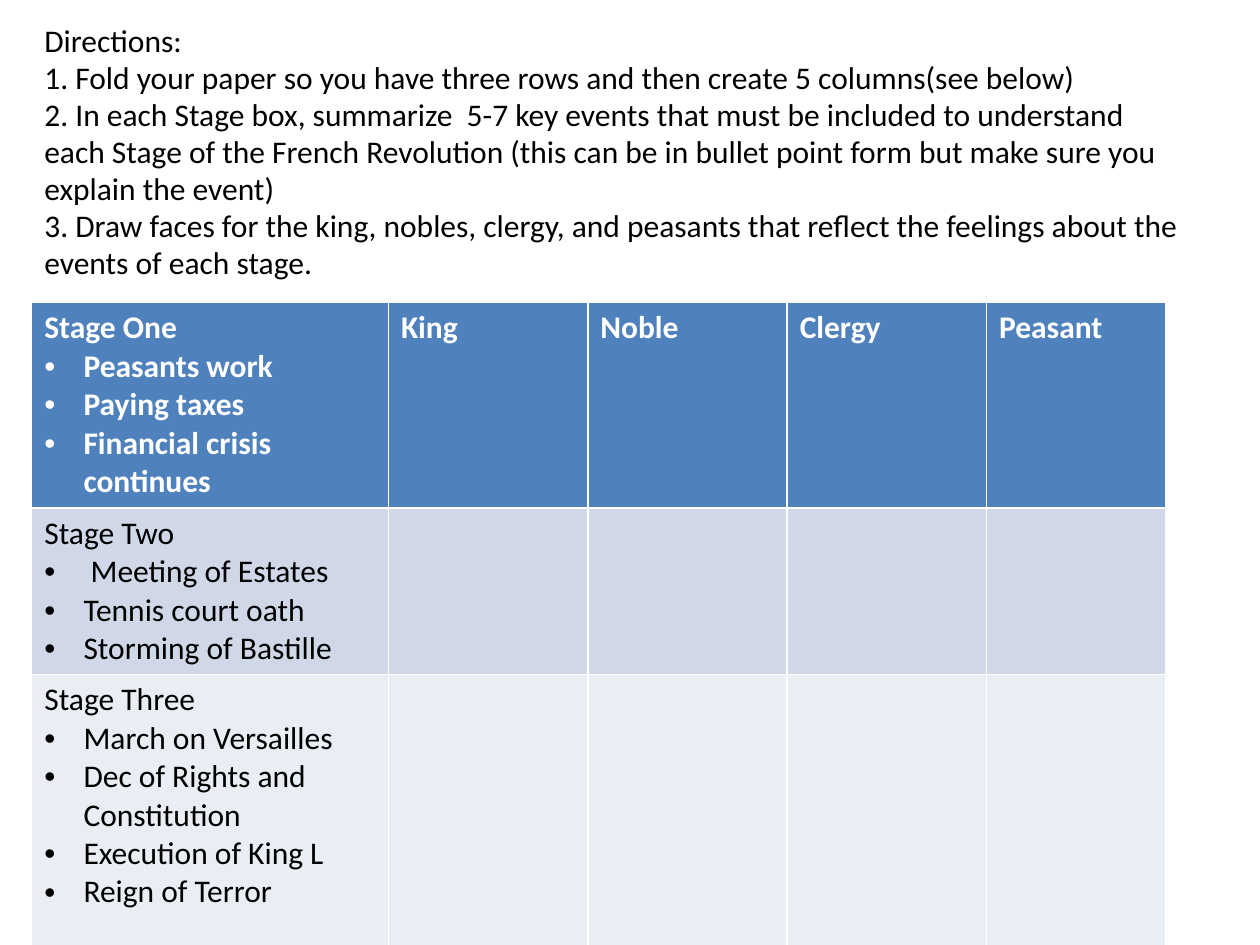
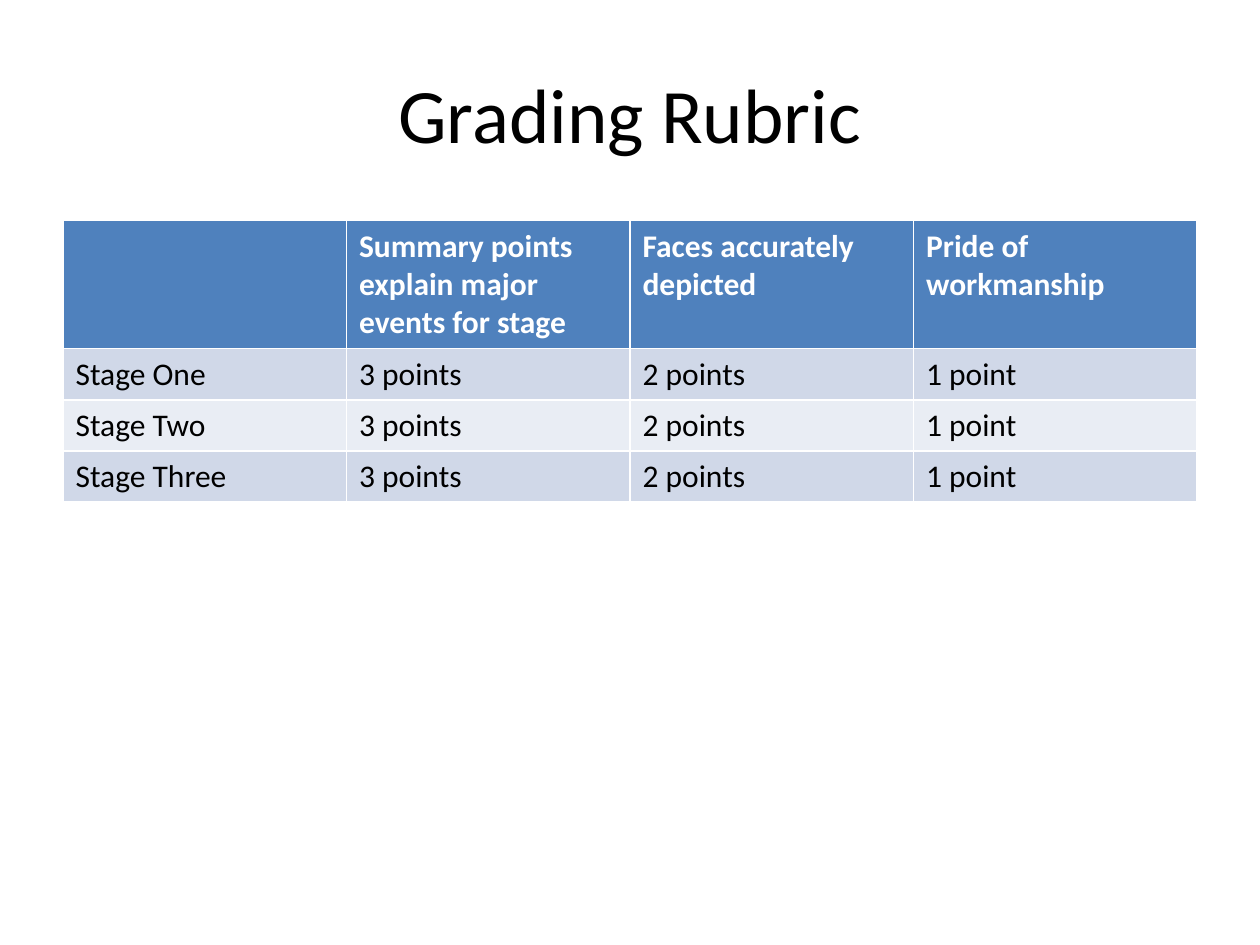
"""Build the French Revolution stages worksheet and its grading rubric."""
from lxml.etree import SubElement
from pptx import Presentation
from pptx.dml.color import RGBColor
from pptx.enum.text import MSO_ANCHOR as Anchor, MSO_AUTO_SIZE as AutoSize, PP_ALIGN as Align
from pptx.oxml.ns import qn
from pptx.util import Cm, Pt

DIRECTIONS = [
    "Directions:",
    "1. Fold your paper so you have three rows and then create 5 columns(see below)",
    "2. In each Stage box, summarize  5-7 key events that must be included to understand "
    "each Stage of the French Revolution (this can be in bullet point form but make sure "
    "you explain the event)",
    "3. Draw faces for the king, nobles, clergy, and peasants that reflect the feelings "
    "about the events of each stage.",
]
STAGES = {
    "Stage One": ["Peasants work", "Paying taxes", "Financial crisis continues"],
    "Stage Two": [" Meeting of Estates", "Tennis court oath", "Storming of Bastille"],
    "Stage Three": ["March on Versailles", "Dec of Rights and Constitution",
                    "Execution of King L", "Reign of Terror"],
}
ESTATES = ["King", "Noble", "Clergy", "Peasant"]
CRITERIA = {
    "Summary points explain major events for stage": "3 points",
    "Faces accurately depicted": "2 points",
    "Pride of workmanship": "1 point",
}

COLORS = {"header": "4F81BD", "odd": "D0D8E8", "even": "E9EDF4",
          "header_text": "FFFFFF", "text": "000000"}
FONT = "Calibri"
BODY_SIZE = 18
TABLE_WIDTH = 22.86
BULLET_INDENT = Cm(0.79)


def style_font(paragraph, size, color, bold=False):
    font = paragraph.font
    font.name, font.size, font.bold = FONT, Pt(size), bold
    font.color.rgb = RGBColor.from_string(COLORS[color])


def add_bullet(paragraph):
    properties = paragraph._p.get_or_add_pPr()
    properties.set("marL", str(BULLET_INDENT))
    properties.set("indent", str(-BULLET_INDENT))
    SubElement(properties, qn("a:buFont"), typeface="Arial")
    SubElement(properties, qn("a:buChar"), char="•")


def add_titled_slide(deck, lines, box, size, align):
    slide = deck.slides.add_slide(deck.slide_layouts[5])
    title = slide.shapes.title
    title.left, title.top, title.width, title.height = map(Cm, box)
    frame = title.text_frame
    frame.text = "\n".join(lines)
    frame.auto_size, frame.vertical_anchor = AutoSize.NONE, Anchor.MIDDLE
    for paragraph in frame.paragraphs:
        paragraph.alignment = align
        paragraph.line_spacing = 0.98
        style_font(paragraph, size, "text")
    return slide


def fill_cell(cell, lines, row):
    band = "header" if row == 0 else "odd" if row % 2 else "even"
    cell.fill.solid()
    cell.fill.fore_color.rgb = RGBColor.from_string(COLORS[band])
    cell.text_frame.text = "\n".join(lines)
    for position, paragraph in enumerate(cell.text_frame.paragraphs):
        if position:
            add_bullet(paragraph)
        style_font(paragraph, BODY_SIZE, "text" if row else "header_text", bold=row == 0)


def add_grid(slide, rows, left, top, widths, heights):
    table = slide.shapes.add_table(len(rows), len(widths), Cm(left), Cm(top),
                                   Cm(sum(widths)), Cm(sum(heights))).table
    for column, width in zip(table.columns, widths):
        column.width = Cm(width)
    for number, (cells, height) in enumerate(zip(rows, heights)):
        table.rows[number].height = Cm(height)
        for cell, lines in zip(table.rows[number].cells, cells):
            fill_cell(cell, lines, number)


def main():
    deck = Presentation()
    deck.slide_width, deck.slide_height = Cm(25.4), Cm(19.05)

    worksheet = add_titled_slide(deck, DIRECTIONS, (0.64, 0.43, 23.5, 5.28), BODY_SIZE, Align.LEFT)
    stage_rows = [
        [[stage, *events]] + [[estate if number == 0 else ""] for estate in ESTATES]
        for number, (stage, events) in enumerate(STAGES.items())
    ]
    stage_width, face_width = 7.19, 4.02
    last_width = TABLE_WIDTH - stage_width - 3 * face_width
    add_grid(worksheet, stage_rows, 0.64, 6.1,
             [stage_width] + [face_width] * 3 + [last_width], [4.14, 3.33, 5.48])

    rubric = add_titled_slide(deck, ["Grading Rubric"], (1.27, 0.76, 22.86, 3.18), 44, Align.CENTER)
    rubric_rows = [[[""]] + [[criterion] for criterion in CRITERIA]]
    rubric_rows += [[[stage]] + [[points] for points in CRITERIA.values()] for stage in STAGES]
    columns = len(CRITERIA) + 1
    add_grid(rubric, rubric_rows, 1.27, 4.45,
             [TABLE_WIDTH / columns] * columns, [2.54] + [1.03] * len(STAGES))

    deck.save("out.pptx")


if __name__ == "__main__":
    main()
